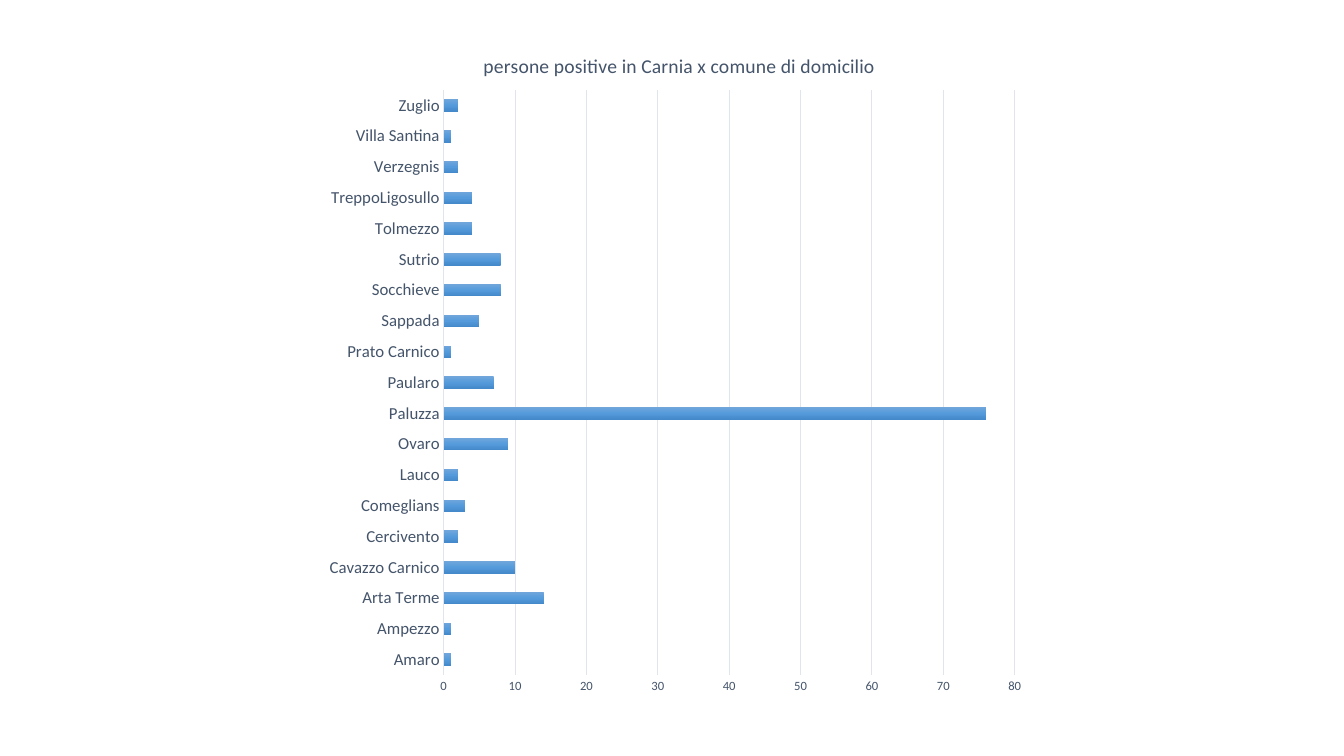
"""Build a slide with a bar chart of positive cases per municipality in Carnia."""
from lxml.etree import SubElement
from pptx import Presentation
from pptx.chart.data import CategoryChartData
from pptx.dml.color import RGBColor
from pptx.enum.chart import XL_CHART_TYPE, XL_TICK_LABEL_POSITION, XL_TICK_MARK
from pptx.oxml import parse_xml
from pptx.oxml.ns import nsdecls, qn
from pptx.util import Inches, Pt

COLORS = {"text": "44546A", "grid": "E0E5EB", "base": "000000",
          "bar_top": "71A6DB", "bar_mid": "559BDB", "bar_low": "448ACA"}
CASES = {
    "Amaro": 1, "Ampezzo": 1, "Arta Terme": 14, "Cavazzo Carnico": 10,
    "Cercivento": 2, "Comeglians": 3, "Lauco": 2, "Ovaro": 9, "Paluzza": 76,
    "Paularo": 7, "Prato Carnico": 1, "Sappada": 5, "Socchieve": 8,
    "Sutrio": 8, "Tolmezzo": 4, "TreppoLigosullo": 4, "Verzegnis": 2,
    "Villa Santina": 1, "Zuglio": 2,
}


def rgb(name):
    return RGBColor.from_string(COLORS[name])


def set_font(font, size, color, name="Calibri"):
    font.name, font.size, font.bold = name, Pt(size), False
    font.color.rgb = rgb(color)


def write(tf, text, **fmt):
    p = tf.paragraphs[0]
    r = p.add_run()
    r.text = text
    set_font(r.font, **fmt)


def place(element, index, inner=False, **fractions):
    old = element.find(qn("c:layout"))
    if old is not None:
        element.remove(old)
    target = '<c:layoutTarget val="inner"/>' if inner else ""
    modes = "".join(f'<c:{k}Mode val="edge"/>' for k in "xy")
    sizes = "".join(f'<c:{k} val="{v}"/>' for k, v in fractions.items())
    element.insert(index, parse_xml(
        f'<c:layout {nsdecls("c")}><c:manualLayout>{target}{modes}{sizes}'
        "</c:manualLayout></c:layout>"))


class Deck:
    def __init__(self):
        self.prs = Presentation()
        self.prs.slide_width, self.prs.slide_height = Inches(13.33), Inches(7.5)
        self.s = self.prs.slides.add_slide(self.prs.slide_layouts[6])

    def bar_chart(self, values, left, top, width, height):
        data = CategoryChartData()
        data.categories = list(values)
        data.add_series("Series 1", list(values.values()))
        chart = self.s.shapes.add_chart(
            XL_CHART_TYPE.BAR_CLUSTERED, Inches(left), Inches(top),
            Inches(width), Inches(height), data).chart
        chart.has_legend = False
        set_font(chart.font, 10, "base")
        plot = chart.plots[0]
        plot.gap_width, plot.vary_by_categories = 150, False
        place(chart._chartSpace.chart.plotArea, 0, inner=True,
              x=0.18, y=0.1, w=0.79, h=0.85)
        return chart

    def chart_title(self, chart, text):
        chart.has_title = True
        title = chart.chart_title
        write(title.text_frame, text, size=14, color="text")
        place(title._element, 1, x=0.23, y=0.04)

    def axis(self, axis, size):
        axis.major_tick_mark = axis.minor_tick_mark = XL_TICK_MARK.NONE
        axis.tick_label_position = XL_TICK_LABEL_POSITION.NEXT_TO_AXIS
        set_font(axis.tick_labels.font, size, "text")

    def line(self, line):
        line.color.rgb, line.width = rgb("grid"), Pt(0.75)

    def gradient(self, series, names):
        fill = series.format.fill
        fill.gradient()
        fill.gradient_angle = 270
        stops = series._element.find(".//" + qn("a:gsLst"))
        for old in list(stops):
            stops.remove(old)
        for i, name in enumerate(names):
            gs = SubElement(stops, qn("a:gs"), pos=str(i * 100000 // (len(names) - 1)))
            SubElement(gs, qn("a:srgbClr"), val=COLORS[name])


def main():
    deck = Deck()
    chart = deck.bar_chart(CASES, 3.11, 0.21, 7.17, 6.83)
    deck.chart_title(chart, "persone positive in Carnia x comune di domicilio")
    towns, counts = chart.category_axis, chart.value_axis
    deck.axis(towns, 12)
    deck.line(towns.format.line)
    deck.axis(counts, 9)
    counts.format.line.fill.background()
    counts.minimum_scale, counts.maximum_scale, counts.major_unit = 0, 80, 10
    counts.has_major_gridlines = True
    deck.line(counts.major_gridlines.format.line)
    deck.gradient(chart.plots[0].series[0], ["bar_top", "bar_mid", "bar_low"])
    deck.prs.save("out.pptx")


if __name__ == "__main__":
    main()
